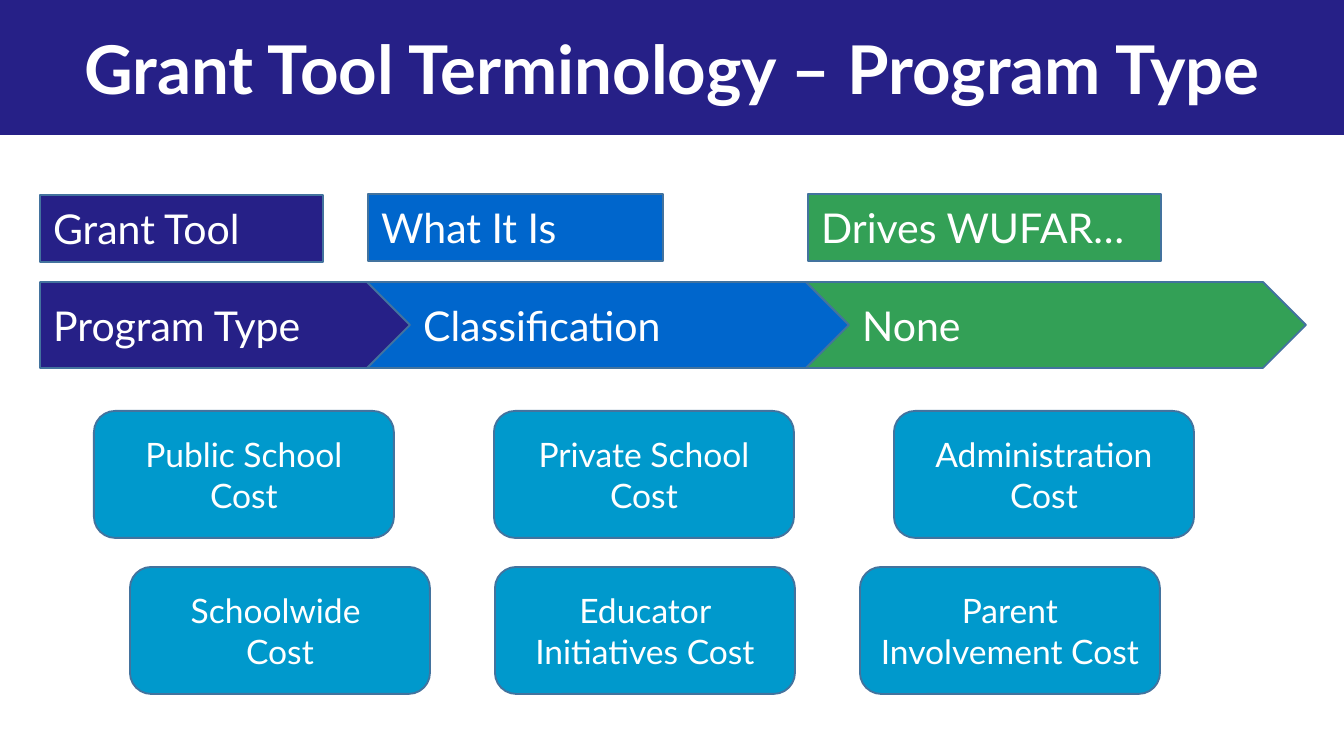
from pptx import Presentation
from pptx.dml.color import RGBColor
from pptx.enum.shapes import MSO_SHAPE
from pptx.enum.text import MSO_ANCHOR, PP_ALIGN
from pptx.util import Emu, Pt

RECT = MSO_SHAPE.RECTANGLE
ROUNDED = MSO_SHAPE.ROUNDED_RECTANGLE
PENTAGON = MSO_SHAPE.PENTAGON
CHEVRON = MSO_SHAPE.CHEVRON
LEFT, CENTER = PP_ALIGN.LEFT, PP_ALIGN.CENTER
MIDDLE = MSO_ANCHOR.MIDDLE

EMU_PER_PX = 914400 / 134.4
NAVY, BLUE, GREEN, CYAN = "262087", "0066CC", "33A056", "0099CC"
OUTLINE, WHITE = "43739E", "FFFFFF"


def px(length):
    return Emu(round(length * EMU_PER_PX))


def add_label(text, kind, left, top, width, height, *, fill, size=22,
              align=LEFT, bold=False, outline=OUTLINE):
    box = page.shapes.add_shape(kind, px(left), px(top), px(width), px(height))
    box.shadow.inherit = False
    box.fill.solid()
    box.fill.fore_color.rgb = RGBColor.from_string(fill)
    if outline:
        box.line.color.rgb = RGBColor.from_string(outline)
        box.line.width = Pt(1)
    else:
        box.line.fill.background()
    frame = box.text_frame
    frame.word_wrap = True
    frame.vertical_anchor = MIDDLE
    para = frame.paragraphs[0]
    para.text = text
    para.alignment = align
    for span in para.runs:
        span.font.name = "Lato"
        span.font.size = Pt(size)
        span.font.bold = bold
        span.font.color.rgb = RGBColor.from_string(WHITE)


deck = Presentation()
deck.slide_width, deck.slide_height = px(1344), px(756)
page = deck.slides.add_slide(deck.slide_layouts[6])

# Title band
add_label("Grant Tool Terminology – Program Type", RECT, 0, 0, 1344, 135,
          fill=NAVY, size=36, align=CENTER, bold=True, outline=None)

# Column headings
headings = [
    ("Grant Tool", 40, 195, 283, NAVY),
    ("What It Is", 368, 194, 295, BLUE),
    ("Drives WUFAR…", 808, 194, 353, GREEN),
]
for text, left, top, width, color in headings:
    add_label(text, RECT, left, top, width, 67, fill=color)

# Arrow band
arrows = [
    ("Program Type", PENTAGON, 40, 371, NAVY),
    ("Classification", CHEVRON, 367, 482, BLUE),
    ("None", CHEVRON, 806, 500, GREEN),
]
for text, kind, left, width, color in arrows:
    add_label(text, kind, left, 282, width, 86, fill=color)

# Cost cards: first left edge, column step, top, texts
card_rows = [
    (94, 400, 411, ["Public School Cost", "Private School Cost",
                    "Administration Cost"]),
    (130, 365, 567, ["Schoolwide \vCost", "Educator Initiatives Cost",
                     "Parent Involvement Cost"]),
]
for first_left, step, top, texts in card_rows:
    for column, text in enumerate(texts):
        add_label(text, ROUNDED, first_left + column * step, top, 300, 127,
                  fill=CYAN, size=18, align=CENTER)

deck.save("out.pptx")
